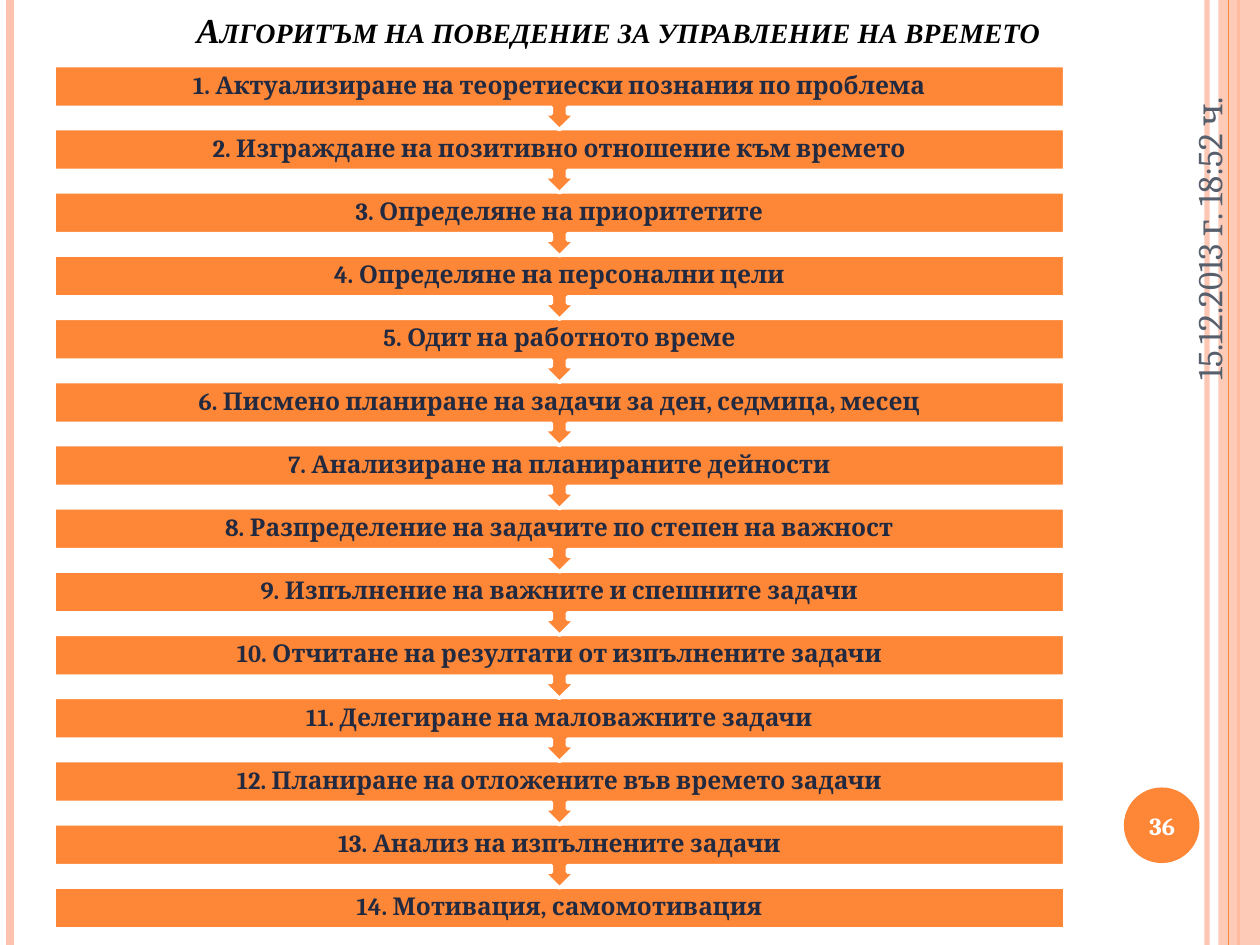
import pptx
import pptx.util
import pptx.dml.color
import pptx.enum.shapes
import pptx.enum.text
import pptx.oxml.ns
from lxml import etree

Inches, Pt = pptx.util.Inches, pptx.util.Pt
RGBColor = pptx.dml.color.RGBColor
SHAPE = pptx.enum.shapes.MSO_SHAPE
ALIGN = pptx.enum.text.PP_ALIGN
ANCHOR = pptx.enum.text.MSO_ANCHOR
qn = pptx.oxml.ns.qn

ORANGE = RGBColor(0xFE, 0x86, 0x37)
PEACH = RGBColor(0xFE, 0xC3, 0xAE)
WHITE = RGBColor(0xFF, 0xFF, 0xFF)
BLACK = RGBColor(0, 0, 0)
NAVY = RGBColor(0x21, 0x2A, 0x40)
SLATE = RGBColor(0x57, 0x5F, 0x6D)

WIDTH, HEIGHT = 10, 7.5
STEP_LEFT, STEP_TOP, STEP_WIDTH = 0.43, 0.52, 8.02
BAR_HEIGHT, CALLOUT_HEIGHT = 0.33, 0.51
LAST_TOP = 7.04

STEPS = [
    "Актуализиране на теоретиески познания по проблема",
    "Изграждане на позитивно отношение към времето",
    "Определяне на приоритетите",
    "Определяне на персонални цели",
    "Одит на работното време",
    "Писмено планиране на задачи за ден, седмица, месец",
    "Анализиране на планираните дейности",
    "Разпределение на задачите по степен на важност",
    "Изпълнение на важните и спешните задачи",
    "Отчитане на резултати от изпълнените задачи",
    "Делегиране на маловажните задачи",
    "Планиране на отложените във времето задачи",
    "Анализ на изпълнените задачи",
    "Мотивация, самомотивация",
]


def set_alpha(fill_parent, percent):
    color = fill_parent.find(".//" + qn("a:srgbClr"))
    etree.SubElement(color, qn("a:alpha")).set("val", str(percent * 1000))


def add_rule(s, x, color, width, alpha=None):
    line = s.shapes.add_connector(pptx.enum.shapes.MSO_CONNECTOR.STRAIGHT,
                                  Inches(x), 0, Inches(x), Inches(HEIGHT))
    line.line.color.rgb = color
    line.line.width = Pt(width)
    if alpha:
        set_alpha(line.line._ln, alpha)
    etree.SubElement(line._element.spPr, qn("a:effectLst"))


def add_block(s, kind, box, fill, outline=None):
    sp = s.shapes.add_shape(kind, *map(Inches, box))
    sp.shadow.inherit = False
    sp.fill.solid()
    sp.fill.fore_color.rgb = fill
    if outline is None:
        sp.line.fill.background()
    else:
        sp.line.color.rgb = outline
        sp.line.width = Pt(2)
    return sp


def format_text(tf, text, size, color, align, font="Cambria", bold=False):
    tf.text = text
    tf.word_wrap = True
    p = tf.paragraphs[0]
    p.alignment = align
    r = p.runs[0]
    r.font.name = font
    r.font.size = Pt(size)
    r.font.bold = bold
    r.font.color.rgb = color
    return r


def add_label(s, box, text, size, color, align=ALIGN.CENTER, bold=True):
    sp = s.shapes.add_textbox(*map(Inches, box))
    format_text(sp.text_frame, text, size, color, align, bold=bold)
    sp.text_frame.vertical_anchor = ANCHOR.MIDDLE
    return sp


def add_step(s, index):
    pitch = (LAST_TOP - STEP_TOP) / (len(STEPS) - 1)
    top = STEP_TOP + index * pitch
    bar = (STEP_LEFT, top, STEP_WIDTH, BAR_HEIGHT)
    if index == len(STEPS) - 1:
        add_block(s, SHAPE.RECTANGLE, bar, ORANGE, WHITE)
    else:
        callout = (STEP_LEFT, top, STEP_WIDTH, CALLOUT_HEIGHT)
        sp = add_block(s, SHAPE.UP_ARROW_CALLOUT, callout, ORANGE, WHITE)
        sp.rotation = 180
    label = add_label(s, bar, f"{index + 1}. {STEPS[index]}", 14, NAVY)
    tf = label.text_frame
    tf.margin_left = tf.margin_right = tf.margin_top = tf.margin_bottom = Inches(0.11)
    tf.paragraphs[0].line_spacing = 0.9


def add_title(s, text):
    sp = s.shapes.title
    sp.left, sp.top, sp.width, sp.height = map(Inches, (1.46, 0.01, 7, 0.44))
    tf = sp.text_frame
    r = format_text(tf, text, 20, BLACK, ALIGN.LEFT, "Times New Roman", True)
    tf.auto_size = pptx.enum.text.MSO_AUTO_SIZE.NONE
    tf.vertical_anchor = ANCHOR.BOTTOM
    r.font.italic = True
    r.font._element.set("cap", "small")


def add_frame(s):
    add_rule(s, 9.58, PEACH, 3, 93)
    add_rule(s, 0.08, PEACH, 4.5)
    add_rule(s, 9.83, ORANGE, 1.5)
    band = add_block(s, SHAPE.RECTANGLE, (9.67, 0, WIDTH - 9.67, HEIGHT), PEACH)
    set_alpha(band._element.spPr, 87)
    add_rule(s, 9.75, ORANGE, 0.75)
    add_block(s, SHAPE.OVAL, (8.92, 6.25, 0.6, 0.6), ORANGE)


def main():
    prs = pptx.Presentation()
    prs.slide_width, prs.slide_height = Inches(WIDTH), Inches(HEIGHT)
    s = prs.slides.add_slide(prs.slide_layouts[5])
    add_frame(s)
    add_title(s, "Алгоритъм на поведение за управление на времето")
    for index in reversed(range(len(STEPS))):
        add_step(s, index)
    date = add_label(s, (8.09, 1.97, 3, 0.4), "15.12.2013 г. 18:52 ч.",
                     20, SLATE, ALIGN.RIGHT, False)
    date.rotation = 270
    add_label(s, (8.89, 6.27, 0.67, 0.57), "36", 14, WHITE)
    prs.save("out.pptx")


if __name__ == "__main__":
    main()
